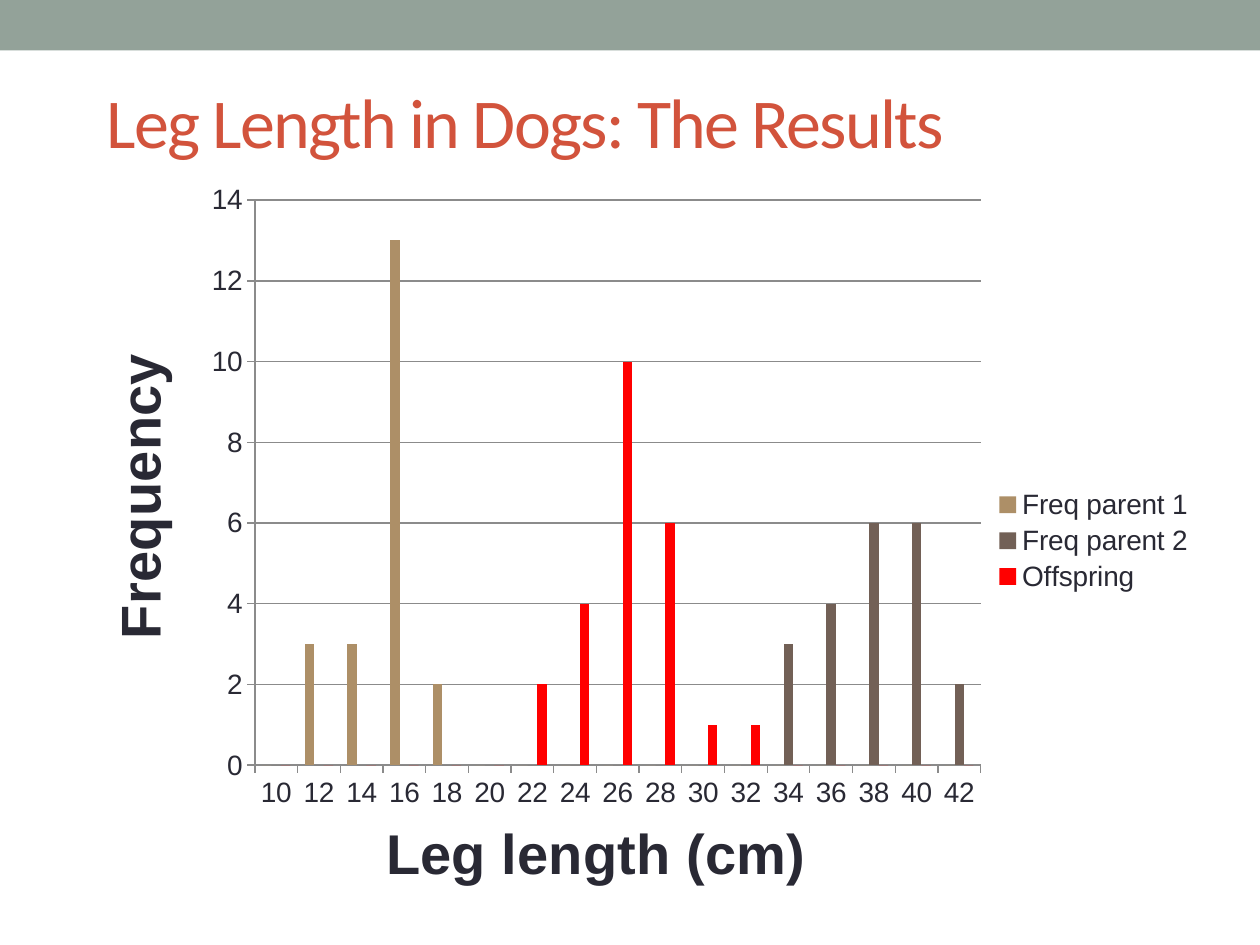
"""Build the slide on leg length in dogs."""
import dataclasses
import pptx
import pptx.chart.data
import pptx.dml.color
import pptx.enum.chart
import pptx.enum.shapes
import pptx.enum.text
import pptx.oxml
import pptx.oxml.ns
import pptx.util

Pt = pptx.util.Pt


@dataclasses.dataclass(frozen=True)
class Theme:
    band: str = "93A299"
    title: str = "D2533C"
    ink: str = "292934"
    grid: str = "8B8B8B"
    bars: tuple = ("AD8F67", "726056", "FF0000")
    head: str = "Calibri"
    body: str = "Arial"
    large: int = 40
    mid: int = 32
    small: int = 16


def apply(item, form):
    for name, value in form.items():
        setattr(item, name, value)


def color(code):
    return pptx.dml.color.RGBColor.from_string(code)


class Maker:
    def __init__(self, theme, slide):
        self.theme = theme
        self.slide = slide

    def font(self, font, face, size, code, bold=False):
        apply(font, {"name": face, "size": Pt(size), "bold": bold})
        font.color.rgb = color(code)

    def band(self, *box):
        kind = pptx.enum.shapes.MSO_SHAPE.RECTANGLE
        shape = self.slide.shapes.add_shape(kind, *map(Pt, box))
        shape.shadow.inherit = False
        shape.fill.solid()
        shape.fill.fore_color.rgb = color(self.theme.band)
        shape.line.fill.background()

    def title(self, text, *box):
        frame = self.slide.shapes.add_textbox(*map(Pt, box)).text_frame
        apply(frame, {"word_wrap": True,
                      "vertical_anchor": pptx.enum.text.MSO_ANCHOR.MIDDLE})
        run = frame.paragraphs[0].add_run()
        run.text = text
        self.font(run.font, self.theme.head, self.theme.large, self.theme.title)
        run.font._element.set("spc", "-100")

    def axis(self, axis, text, form):
        apply(axis, form)
        axis.format.line.color.rgb = color(self.theme.grid)
        frame = axis.axis_title.text_frame
        frame.text = text
        self.font(frame.paragraphs[0].runs[0].font, self.theme.body,
                  self.theme.mid, self.theme.ink, True)

    def layout(self, chart, *area):
        parts = [("layoutTarget", "inner"), ("xMode", "edge"), ("yMode", "edge")]
        parts += zip("xywh", area)
        body = "".join(f'<c:{tag} val="{value}"/>' for tag, value in parts)
        space = pptx.oxml.ns.nsdecls("c")
        plot = chart._chartSpace.chart.plotArea
        for old in plot.findall(pptx.oxml.ns.qn("c:layout")):
            plot.remove(old)
        plot.insert(0, pptx.oxml.parse_xml(
            f"<c:layout {space}><c:manualLayout>{body}</c:manualLayout></c:layout>"))

    def chart(self, cats, rows, names, area, *box):
        data = pptx.chart.data.CategoryChartData()
        data.categories = cats
        for name, vals in rows.items():
            data.add_series(name, vals)
        enum = pptx.enum.chart
        chart = self.slide.shapes.add_chart(
            enum.XL_CHART_TYPE.COLUMN_CLUSTERED, *map(Pt, box), data).chart
        self.font(chart.font, self.theme.body, self.theme.small, self.theme.ink)
        apply(chart, {"has_title": False, "has_legend": True})
        apply(chart.legend, {"position": enum.XL_LEGEND_POSITION.RIGHT,
                             "include_in_layout": False})
        plot = chart.plots[0]
        apply(plot, {"gap_width": 150, "overlap": 0, "vary_by_categories": False})
        for row, code in zip(plot.series, self.theme.bars):
            row.invert_if_negative = False
            row.format.fill.solid()
            row.format.fill.fore_color.rgb = color(code)
        form = {"major_tick_mark": enum.XL_TICK_MARK.OUTSIDE,
                "minor_tick_mark": enum.XL_TICK_MARK.NONE}
        scale = {"minimum_scale": 0, "maximum_scale": 14, "major_unit": 2,
                 "has_major_gridlines": True}
        self.axis(chart.category_axis, names[0], form)
        self.axis(chart.value_axis, names[1], form | scale)
        grid = chart.value_axis.major_gridlines.format.line
        grid.color.rgb = color(self.theme.grid)
        self.layout(chart, *area)


def main():
    deck = pptx.Presentation()
    apply(deck, {"slide_width": Pt(720), "slide_height": Pt(540)})
    maker = Maker(Theme(), deck.slides.add_slide(deck.slide_layouts[6]))
    cats = [str(size) for size in range(10, 43, 2)]
    rows = {
        "Freq parent 1": [0, 3, 3, 13, 2] + [0] * 12,
        "Freq parent 2": [0] * 12 + [3, 4, 6, 6, 2],
        "Offspring": [0] * 6 + [2, 4, 10, 6, 1, 1] + [0] * 5,
    }
    maker.band(0, 0, 720, 28.8)
    maker.chart(cats, rows, ("Leg length (cm)", "Frequency"),
                (0.16, 0.03, 0.64, 0.78), 42, 102, 648, 414)
    maker.title("Leg Length in Dogs: The Results", 54, 30, 630, 78)
    deck.save("out.pptx")


if __name__ == "__main__":
    main()
